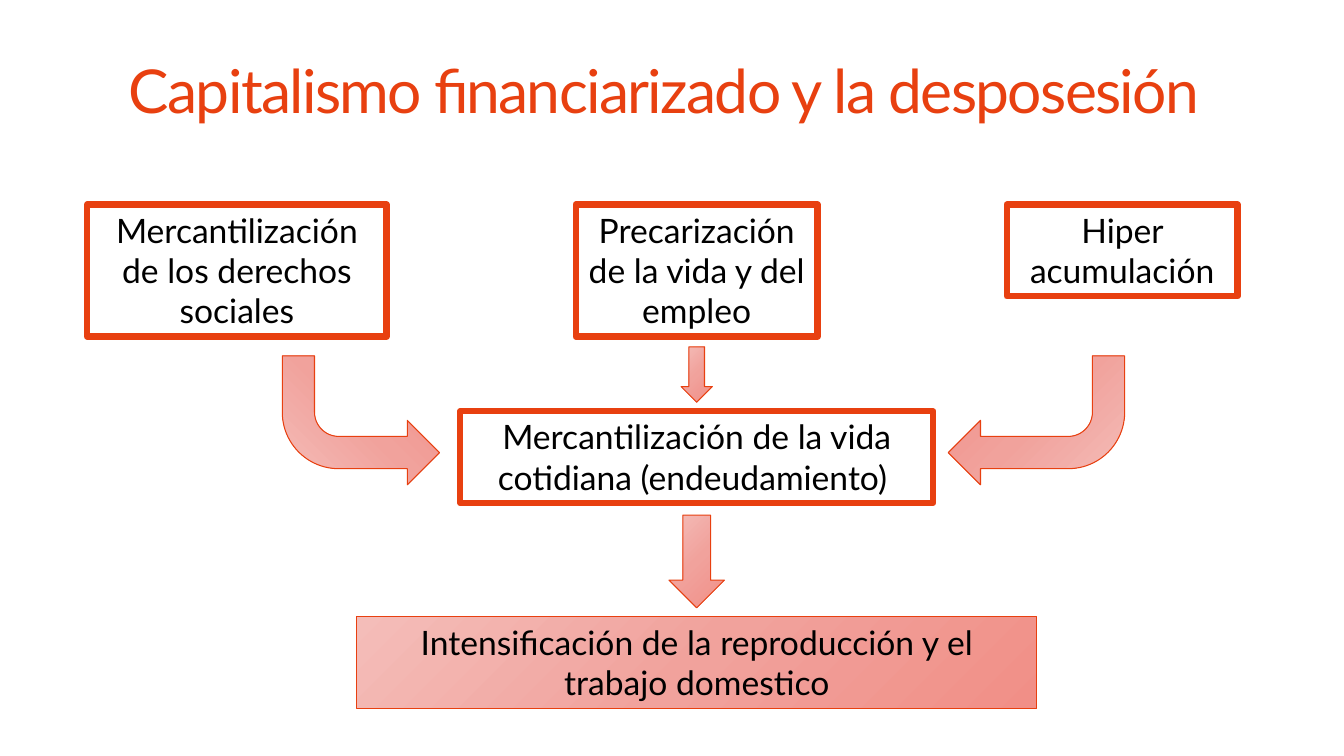
from copy import deepcopy

from pptx import Presentation
from pptx import util as u
from pptx.dml.color import RGBColor
from pptx.enum import shapes, text

TITLE = "Capitalismo financiarizado y la desposesión"
FONT = "Lato"
COLORS = {"accent": "E84010", "text": "000000", "box": "FFFFFF"}
FADE = [(0, "F4BDB9"), (0.5, "F1A29C"), (1, "F18F87")]

AXIS = 6.91  # centre of the middle column
TOP = 2.03
TWO, THREE = 0.91, 1.31  # heights of boxes with two and three lines

# text, centre x, top, width, height, faded
BOXES = [
    ("Mercantilización de los derechos sociales", 2.35, TOP, 2.97, THREE, False),
    ("Precarización de la vida y del empleo", AXIS, TOP, 2.4, THREE, False),
    ("Hiper acumulación", 11.13, TOP, 2.29, TWO, False),
    ("Mercantilización de la vida cotidiana (endeudamiento) ",
     AXIS, 4.08, 4.69, TWO, False),
    ("Intensificación de la reproducción y el trabajo domestico",
     AXIS, 6.12, 6.74, TWO, True),
]

# kind, centre x, top, width, height, flips
KIND = shapes.MSO_SHAPE
ARROWS = [
    (KIND.BENT_ARROW, 3.58, 3.53, 1.56, 1.28, ["flipV"]),
    (KIND.BENT_ARROW, 10.28, 3.53, 1.75, 1.28, ["flipH", "flipV"]),
    (KIND.DOWN_ARROW, AXIS, 3.44, 0.31, 0.55, []),
    (KIND.DOWN_ARROW, AXIS, 5.11, 0.55, 0.92, []),
]


def rgb(name):
    return RGBColor.from_string(COLORS[name])


def fade(shape):
    """Fill with the three-stop diagonal gradient."""
    fill = shape.fill
    fill.gradient()
    fill.gradient_angle = 315
    stops = shape._element.spPr.xpath(".//a:gsLst")[0]
    stops.append(deepcopy(stops[0]))
    for stop, (place, color) in zip(fill.gradient_stops, FADE):
        stop.position = place
        stop.color.rgb = RGBColor.from_string(color)


def draw(slide, kind, mid, top, width, height, faded):
    """Add an outlined shape centred on mid."""
    shape = slide.shapes.add_shape(
        kind, *map(u.Inches, (mid - width / 2, top, width, height)))
    shape.shadow.inherit = False
    if faded:
        fade(shape)
    else:
        shape.fill.solid()
        shape.fill.fore_color.rgb = rgb("box")
    shape.line.color.rgb = rgb("accent")
    shape.line.width = u.Pt(0.75 if faded else 4.5)
    return shape


def write(frame, words, size, color):
    frame.word_wrap = True
    para = frame.paragraphs[0]
    para.text = words
    para.alignment = text.PP_ALIGN.CENTER
    para.font.name = FONT
    para.font.size = u.Pt(size)
    para.font.color.rgb = rgb(color)
    return para


def add_title(slide):
    box = slide.shapes.add_textbox(*map(u.Inches, (0.69, 0.27, 11.79, 1.02)))
    box.text_frame.vertical_anchor = text.MSO_ANCHOR.BOTTOM
    para = write(box.text_frame, TITLE, 43.2, "accent")
    para.line_spacing = 0.8
    para.runs[0].font._element.set("spc", "-120")


def main():
    deck = Presentation()
    deck.slide_width, deck.slide_height = u.Inches(13.33), u.Inches(7.5)
    slide = deck.slides.add_slide(deck.slide_layouts[6])
    add_title(slide)
    for words, *place, faded in BOXES:
        frame = draw(slide, KIND.RECTANGLE, *place, faded).text_frame
        frame.vertical_anchor = text.MSO_ANCHOR.TOP
        frame.auto_size = text.MSO_AUTO_SIZE.SHAPE_TO_FIT_TEXT
        write(frame, words, 24, "text")
    for kind, *place, flips in ARROWS:
        arrow = draw(slide, kind, *place, True)
        for flip in flips:
            arrow._element.spPr.xfrm.set(flip, "1")
    deck.save("out.pptx")


if __name__ == "__main__":
    main()
